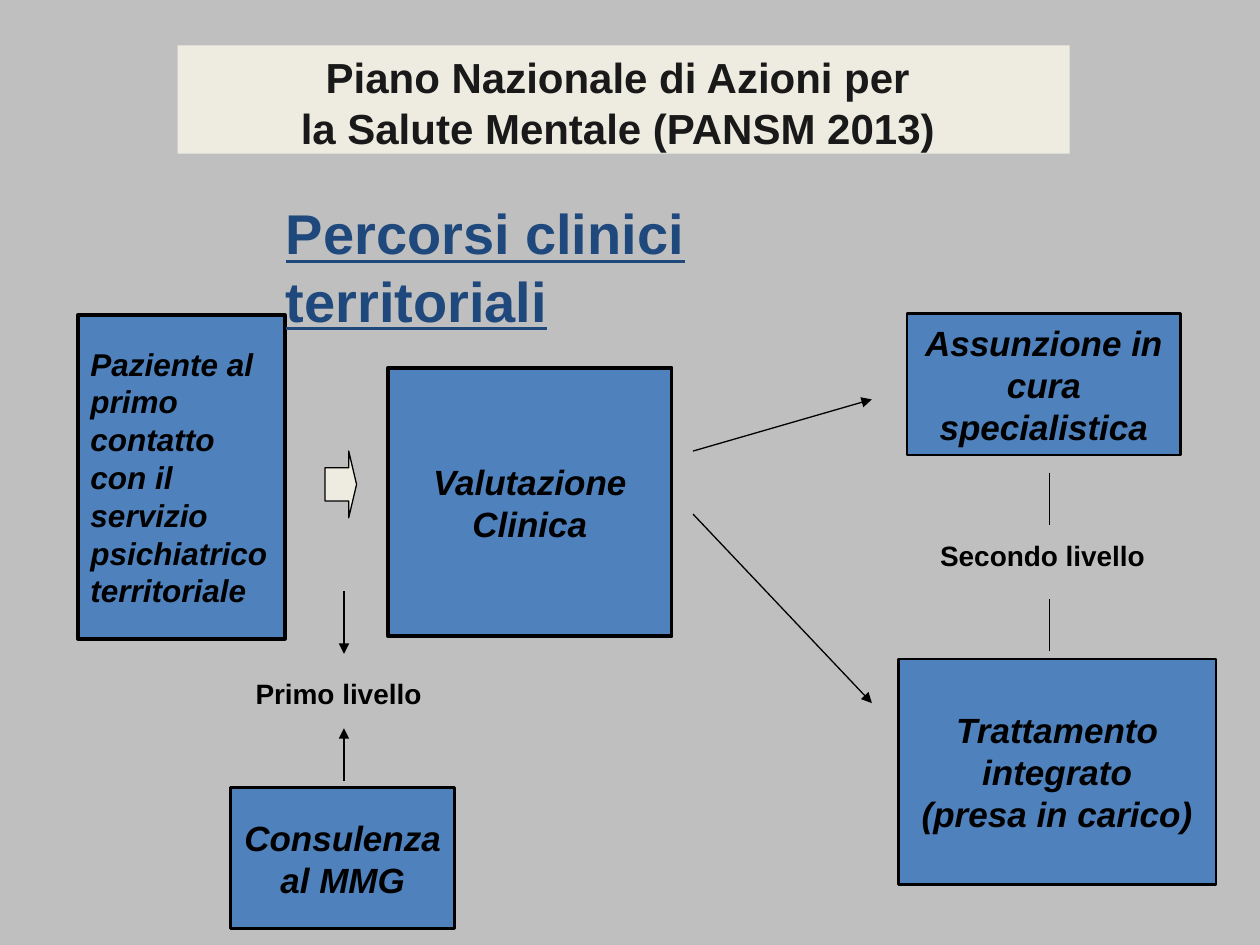
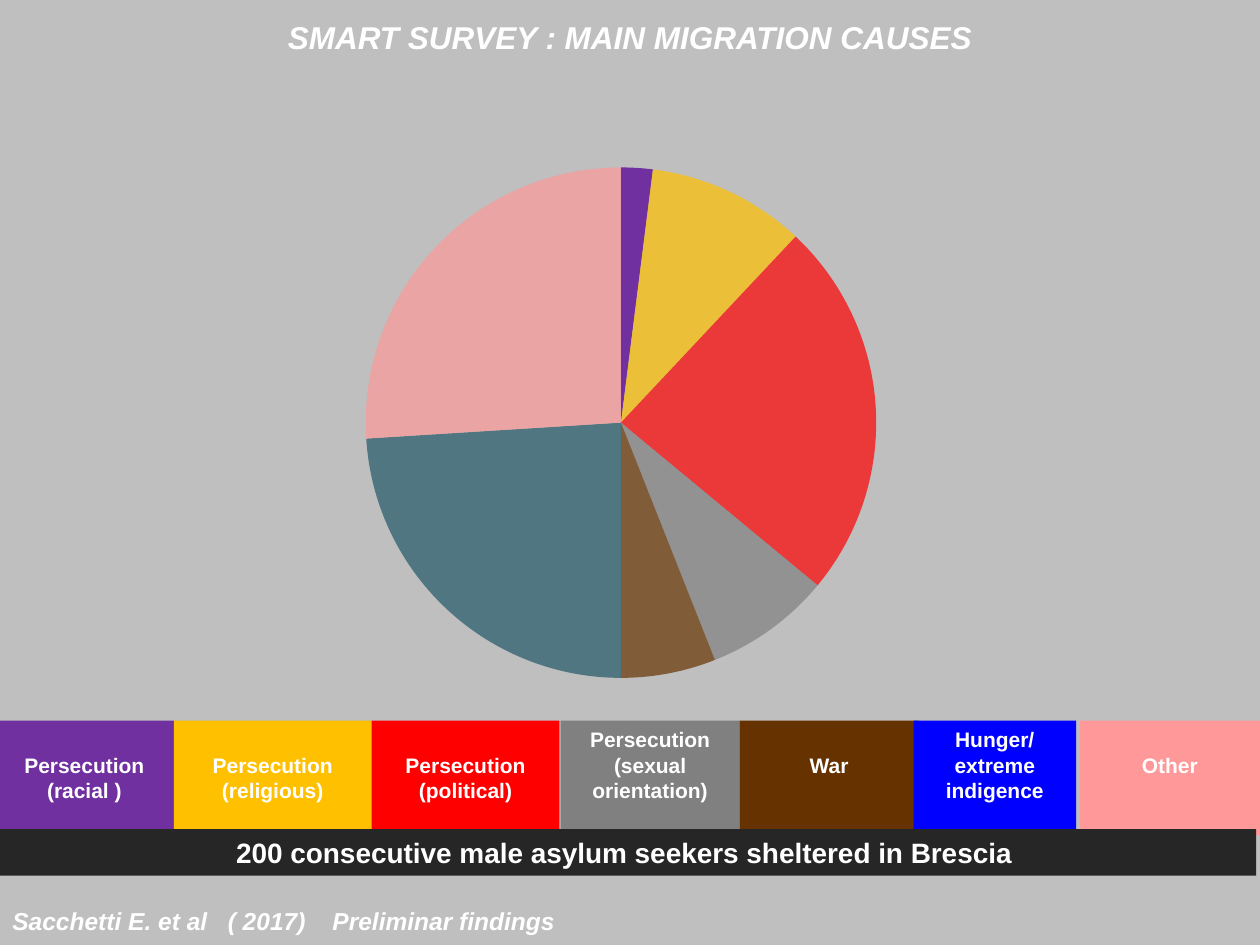
from pptx import Presentation
from pptx.chart.data import CategoryChartData
from pptx.dml.color import RGBColor
from pptx.enum import chart as chart_enum, shapes, text
from pptx.oxml import ns, xmlchemy
from pptx.util import Inches, Pt

GREY_BACKGROUND = RGBColor(0xBF, 0xBF, 0xBF)
BLACK = RGBColor(0, 0, 0)
WHITE = RGBColor(0xFF, 0xFF, 0xFF)
CHARCOAL = RGBColor(0x26, 0x26, 0x26)
TITLE_INK = RGBColor(0x19, 0x19, 0x19)
IVORY = RGBColor(0xEE, 0xEC, 0xE1)
BOX_BLUE = RGBColor(0x4F, 0x81, 0xBD)
HEADING_BLUE = RGBColor(0x1F, 0x49, 0x7D)
PURPLE = RGBColor(0x70, 0x30, 0xA0)
AMBER = RGBColor(0xFF, 0xC0, 0x00)
RED = RGBColor(0xFF, 0, 0)
GREY = RGBColor(0x80, 0x80, 0x80)
BROWN = RGBColor(0x66, 0x33, 0x00)
BLUE = RGBColor(0, 0, 0xFF)
TEAL = RGBColor(0x21, 0x59, 0x68)
PINK = RGBColor(0xFF, 0x99, 0x99)

FONT = "Arial"
CENTER = text.PP_ALIGN.CENTER
LEFT = text.PP_ALIGN.LEFT
TOP = text.MSO_ANCHOR.TOP
MIDDLE = text.MSO_ANCHOR.MIDDLE

# text, place, text size, outline width, alignment
PATHWAY_BOXES = [
    ("Paziente al primo contatto con il servizio psichiatrico territoriale",
     (0.62, 2.5, 1.64, 2.57), 18, 2.25, LEFT),
    ("Valutazione Clinica", (3.08, 2.92, 2.25, 2.13), 20, 2.25, CENTER),
    ("Consulenza al MMG", (1.83, 6.25, 1.78, 1.12), 20, 1.5, CENTER),
    ("Assunzione in cura specialistica", (7.2, 2.49, 2.17, 1.12), 20, 1.5, CENTER),
    ("Trattamento integrato\n(presa in carico)", (7.13, 5.23, 2.52, 1.79), 20, 1.5, CENTER),
]

# start, end, arrowhead
PATHWAY_LINES = [
    ((2.73, 4.69), (2.73, 5.19), True),
    ((2.73, 6.2), (2.73, 5.78), True),
    ((5.5, 3.58), (6.92, 3.17), True),
    ((5.5, 4.08), (6.92, 5.58), True),
    ((8.33, 3.75), (8.33, 4.17), False),
    ((8.33, 5.17), (8.33, 4.75), False),
]

# label, share, slice colour, legend colour, legend left, legend width
CAUSES = [
    ("Persecution\n(racial )", 2, PURPLE, PURPLE, -0.04, 1.42),
    ("Persecution\n(religious)", 10, AMBER, AMBER, 1.38, 1.57),
    ("Persecution\n(political)", 24, RED, RED, 2.95, 1.49),
    ("Persecution\n(sexual orientation)", 8, GREY, GREY, 4.45, 1.42),
    ("War", 6, BROWN, BROWN, 5.87, 1.42),
    ("Hunger/ extreme indigence", 24, TEAL, BLUE, 7.25, 1.29),
    ("Other", 26, PINK, PINK, 8.57, 1.43),
]
THREE_LINE_LABELS = ("Persecution\n(sexual orientation)", "Hunger/ extreme indigence")


def add_xml_child(parent, tag, **attributes):
    child = xmlchemy.OxmlElement(tag)
    for name, value in attributes.items():
        child.set(name, str(value))
    parent.append(child)
    return child


def write_text(shape, content, size, color, align=CENTER, anchor=MIDDLE,
               italic=False, underline=False, wrap=True):
    frame = shape.text_frame
    frame.text = content
    frame.word_wrap = wrap
    frame.auto_size = text.MSO_AUTO_SIZE.NONE
    frame.vertical_anchor = anchor
    for paragraph in frame.paragraphs:
        paragraph.alignment = align
        paragraph.space_before = Pt(0)
        for run in paragraph.runs:
            font = run.font
            font.name, font.size, font.bold = FONT, Pt(size), True
            font.italic, font.underline = italic, underline
            font.color.rgb = color


def place_title(slide, content, place, size, color, italic=False):
    title = slide.shapes.title
    title.left, title.top, title.width, title.height = map(Inches, place)
    write_text(title, content, size, color, anchor=TOP, italic=italic)
    return title


def add_filled_shape(slide, place, fill, outline=None, kind=shapes.MSO_SHAPE.RECTANGLE):
    """Add a flat shape; outline is the width in points of a black border."""
    shape = slide.shapes.add_shape(kind, *map(Inches, place))
    shape.shadow.inherit = False
    shape.fill.solid()
    shape.fill.fore_color.rgb = fill
    if outline:
        shape.line.color.rgb = BLACK
        shape.line.width = Pt(outline)
    else:
        shape.line.fill.background()
    return shape


def add_label(slide, content, place, size, color, **style):
    label = slide.shapes.add_textbox(*map(Inches, place))
    write_text(label, content, size, color, **style)
    return label


def add_line(slide, start, end, arrowhead):
    line = slide.shapes.add_connector(
        shapes.MSO_CONNECTOR.STRAIGHT, *map(Inches, start + end))
    line.line.color.rgb = BLACK
    line.line.width = Pt(0.75)
    if arrowhead:
        add_xml_child(line.line._get_or_add_ln(), "a:tailEnd", type="triangle")
    add_xml_child(line._element.spPr, "a:effectLst")


def set_plot_layout(chart, x, y, w, h):
    plot_area = chart._chartSpace.chart.plotArea
    for old_layout in plot_area.findall(ns.qn("c:layout")):
        plot_area.remove(old_layout)
    layout = xmlchemy.OxmlElement("c:layout")
    manual = add_xml_child(layout, "c:manualLayout")
    settings = {"layoutTarget": "inner", "xMode": "edge", "yMode": "edge",
                "x": x, "y": y, "w": w, "h": h}
    for name, value in settings.items():
        add_xml_child(manual, f"c:{name}", val=value)
    plot_area.insert(0, layout)


def add_causes_pie(slide, place):
    data = CategoryChartData()
    data.categories = [cause[0].replace("\n", " ") for cause in CAUSES]
    data.add_series("Series 1", [cause[1] for cause in CAUSES])
    chart = slide.shapes.add_chart(
        chart_enum.XL_CHART_TYPE.PIE, *map(Inches, place), data).chart
    chart.has_title = False
    chart.has_legend = False
    chart.font.name, chart.font.size = "Calibri", Pt(18)
    chart.font.color.rgb = BLACK
    set_plot_layout(chart, 0.27, 0.03, 0.49, 0.94)
    plot = chart.plots[0]
    plot.vary_by_categories = True
    for index, cause in enumerate(CAUSES):
        point_format = plot.series[0].points[index].format
        point_format.line.fill.background()
        point_format.fill.solid()
        point_format.fill.fore_color.rgb = cause[2]
        if index > 0:
            color = point_format.fill._xPr.find(ns.qn("a:solidFill"))[0]
            add_xml_child(color, "a:alpha", val=70000)


def add_causes_legend(slide):
    for label, _, _, color, left, width in CAUSES:
        cell = add_filled_shape(slide, (left, 5.72, width, 0.91), color)
        write_text(cell, label, 12, WHITE, anchor=TOP)
        cell.text_frame.margin_top = Inches(0.05 if label in THREE_LINE_LABELS else 0.25)


def add_tab_stops(paragraph, *positions):
    tab_list = add_xml_child(paragraph._p.get_or_add_pPr(), "a:tabLst")
    for position in positions:
        add_xml_child(tab_list, "a:tab", pos=Inches(position), algn="l")


def build_pathway_slide(slide):
    title = place_title(
        slide, "Piano Nazionale di Azioni per \nla Salute Mentale (PANSM 2013) ",
        (1.41, 0.36, 7.08, 0.86), 24, TITLE_INK)
    title.fill.solid()
    title.fill.fore_color.rgb = IVORY

    for content, place, size, outline, align in PATHWAY_BOXES:
        box = add_filled_shape(slide, place, BOX_BLUE, outline)
        write_text(box, content, size, BLACK, align, italic=True)

    block_arrow = add_filled_shape(slide, (2.58, 3.58, 0.25, 0.53), IVORY, 0.75,
                                   shapes.MSO_SHAPE.RIGHT_ARROW)
    block_arrow.adjustments[0], block_arrow.adjustments[1] = 0.5, 0.25
    for start, end, arrowhead in PATHWAY_LINES:
        add_line(slide, start, end, arrowhead)

    add_label(slide, "Primo livello", (1.93, 5.32, 1.53, 0.37), 16, BLACK,
              align=LEFT, wrap=False)
    add_label(slide, "Secondo livello", (7.36, 4.22, 1.83, 0.37), 16, BLACK, wrap=False)
    add_label(slide, "Percorsi clinici territoriali", (2.17, 1.53, 5.2, 1.15), 32,
              HEADING_BLUE, align=LEFT, anchor=TOP, underline=True)


def build_survey_slide(slide):
    title = place_title(slide, "SMART SURVEY : MAIN MIGRATION CAUSES",
                        (0, 0, 10, 1.04), 18, WHITE, italic=True)
    title.text_frame.margin_top = Inches(0.02)
    title.text_frame.paragraphs[0].line_spacing = 1.4

    add_causes_pie(slide, (0.67, 0.64, 8.27, 5.43))
    add_causes_legend(slide)
    band = add_filled_shape(slide, (0, 6.58, 9.97, 0.37), CHARCOAL)
    write_text(band, "200 consecutive male asylum seekers sheltered in Brescia ", 16, WHITE)
    citation = add_label(slide, "Sacchetti E. et al\t( 2017)\tPreliminar findings",
                         (0, 7.14, 9.97, 0.34), 14, WHITE, align=LEFT, italic=True)
    add_tab_stops(citation.text_frame.paragraphs[0], 1.71, 2.54)


def main():
    presentation = Presentation()
    presentation.slide_width, presentation.slide_height = Inches(10), Inches(7.5)
    background = presentation.slide_master.background.fill
    background.solid()
    background.fore_color.rgb = GREY_BACKGROUND
    title_only = presentation.slide_layouts[5]
    for build_slide in (build_pathway_slide, build_survey_slide):
        build_slide(presentation.slides.add_slide(title_only))
    presentation.save("out.pptx")


if __name__ == "__main__":
    main()
